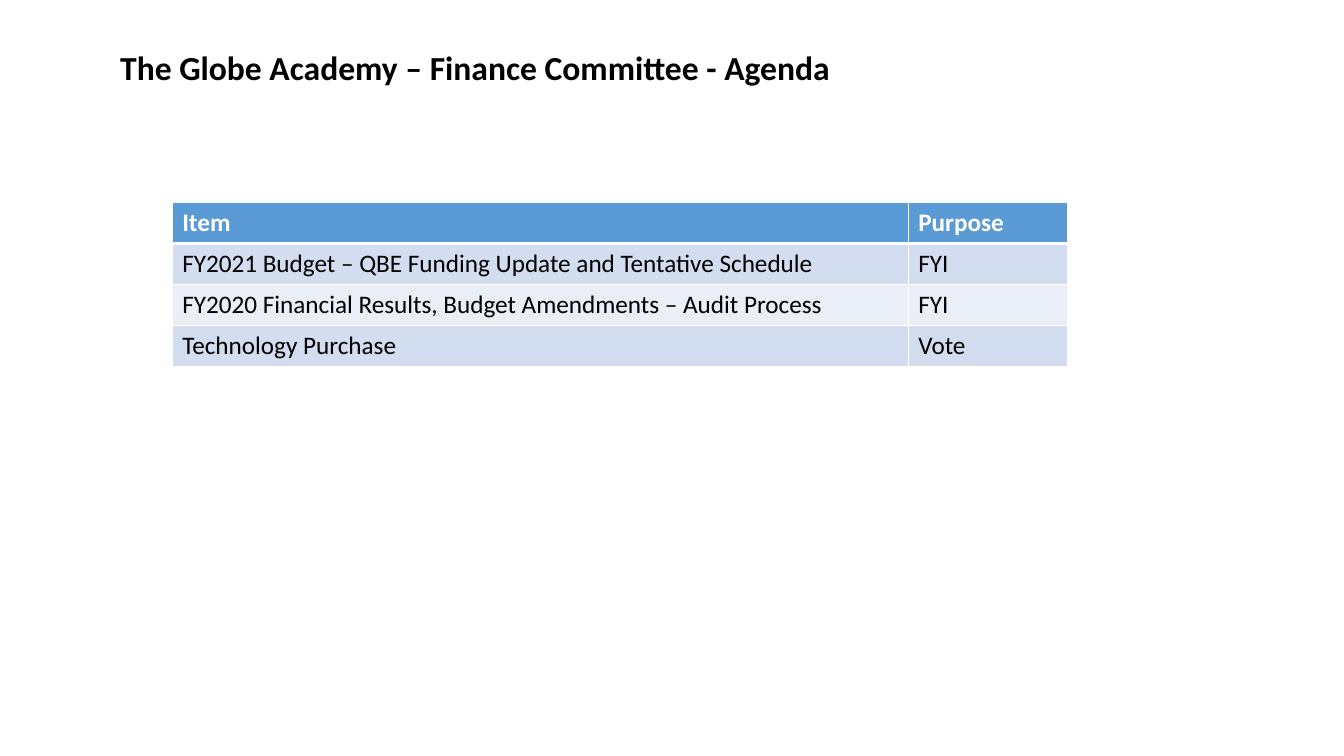
from lxml import etree
from pptx import Presentation
from pptx.dml.color import RGBColor
from pptx.enum.text import MSO_ANCHOR, MSO_AUTO_SIZE
from pptx.oxml.ns import qn
from pptx.util import Pt

MIDDLE = MSO_ANCHOR.MIDDLE
FIT_SHAPE = MSO_AUTO_SIZE.SHAPE_TO_FIT_TEXT

EMU_PER_PX = 9525
BLACK = RGBColor(0x00, 0x00, 0x00)
WHITE = RGBColor(0xFF, 0xFF, 0xFF)
HEADER_BLUE = RGBColor(0x5B, 0x9B, 0xD5)
BAND_COLORS = (RGBColor(0xD2, 0xDE, 0xEF), RGBColor(0xEA, 0xEF, 0xF7))

AGENDA = (
    ("Item", "Purpose"),
    ("FY2021 Budget – QBE Funding Update and Tentative Schedule", "FYI"),
    ("FY2020 Financial Results, Budget Amendments – Audit Process", "FYI"),
    ("Technology Purchase", "Vote"),
)


def px(length):
    return length * EMU_PER_PX


class AgendaSlide:
    font_name = "Calibri"
    title_size = 24
    table_size = 18

    def __init__(self, presentation):
        self.slide = presentation.slides.add_slide(presentation.slide_layouts[6])

    def set_text(self, text_frame, text, size, color, bold):
        text_frame.text = text
        for run in text_frame.paragraphs[0].runs:
            run.font.name = self.font_name
            run.font.size = Pt(size)
            run.font.bold = bold
            run.font.color.rgb = color

    def title(self, text, left, top, width, height):
        shape = self.slide.shapes.add_textbox(px(left), px(top), px(width), px(height))
        shape.text_frame.word_wrap = False
        shape.text_frame.auto_size = FIT_SHAPE
        self.set_text(shape.text_frame, text, self.title_size, BLACK, True)

    def border(self, cell, side, points):
        properties = cell._tc.get_or_add_tcPr()
        line = etree.SubElement(properties, qn(f"a:ln{side}"), w=str(Pt(points)))
        fill = etree.SubElement(line, qn("a:solidFill"))
        etree.SubElement(fill, qn("a:srgbClr"), val=str(WHITE))

    def table(self, rows, left, top, column_widths, row_height):
        table = self.slide.shapes.add_table(
            len(rows), len(column_widths), px(left), px(top),
            px(sum(column_widths)), px(row_height * len(rows)),
        ).table
        for column, width in zip(table.columns, column_widths):
            column.width = px(width)
        for row_index, row in enumerate(rows):
            header = row_index == 0
            fill_color = HEADER_BLUE if header else BAND_COLORS[(row_index - 1) % 2]
            for column_index, text in enumerate(row):
                cell = table.cell(row_index, column_index)
                for side in "LRTB":
                    thick = (header and side == "B") or (row_index == 1 and side == "T")
                    self.border(cell, side, 3 if thick else 1)
                cell.fill.solid()
                cell.fill.fore_color.rgb = fill_color
                cell.vertical_anchor = MIDDLE
                self.set_text(cell.text_frame, text, self.table_size,
                              WHITE if header else BLACK, header)


def main():
    presentation = Presentation()
    presentation.slide_width = px(1280)
    presentation.slide_height = px(720)
    agenda = AgendaSlide(presentation)
    agenda.title("The Globe Academy – Finance Committee - Agenda", 105, 40, 703, 48)
    agenda.table(AGENDA, 164, 193, (701, 152), 39)
    presentation.save("out.pptx")


if __name__ == "__main__":
    main()
